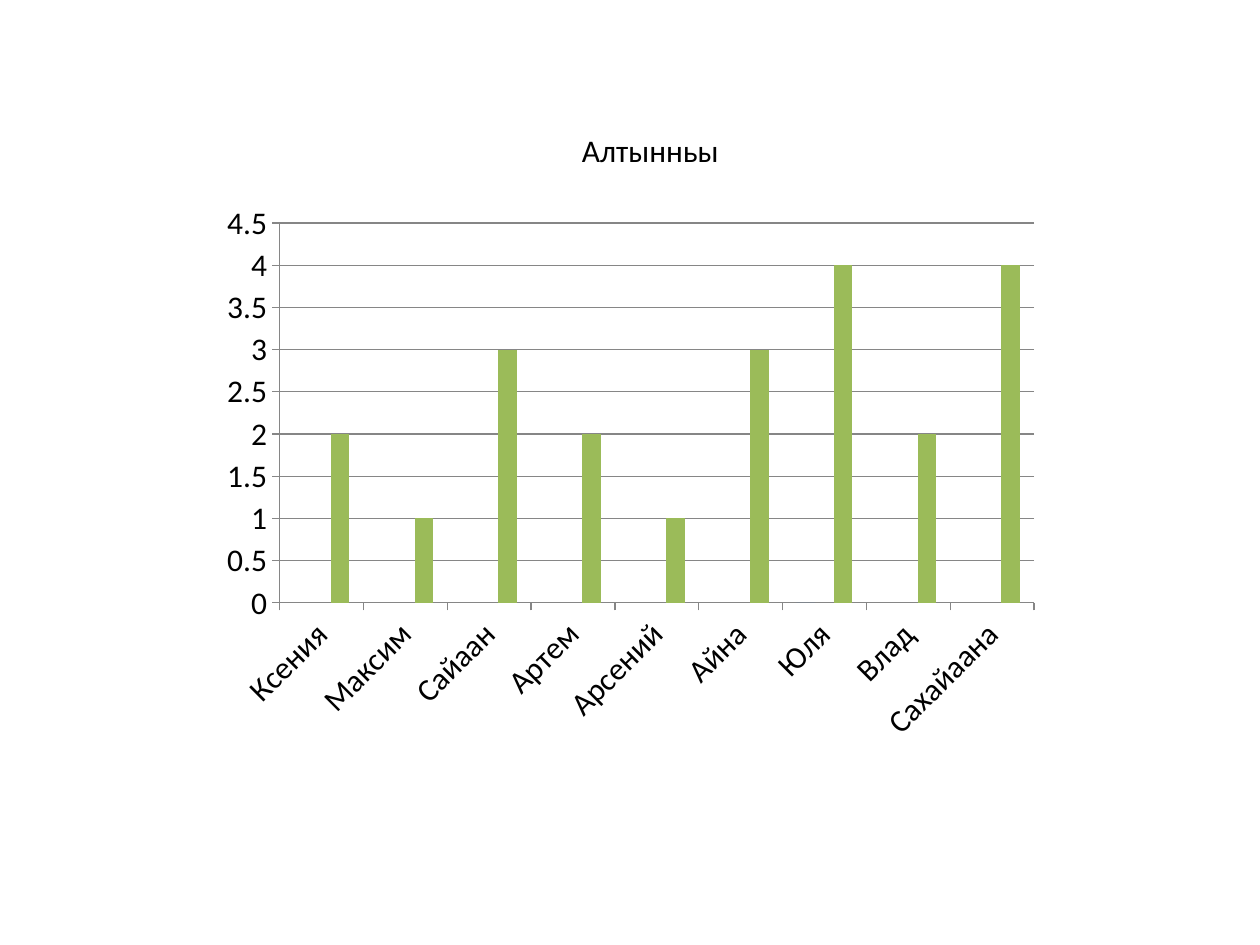
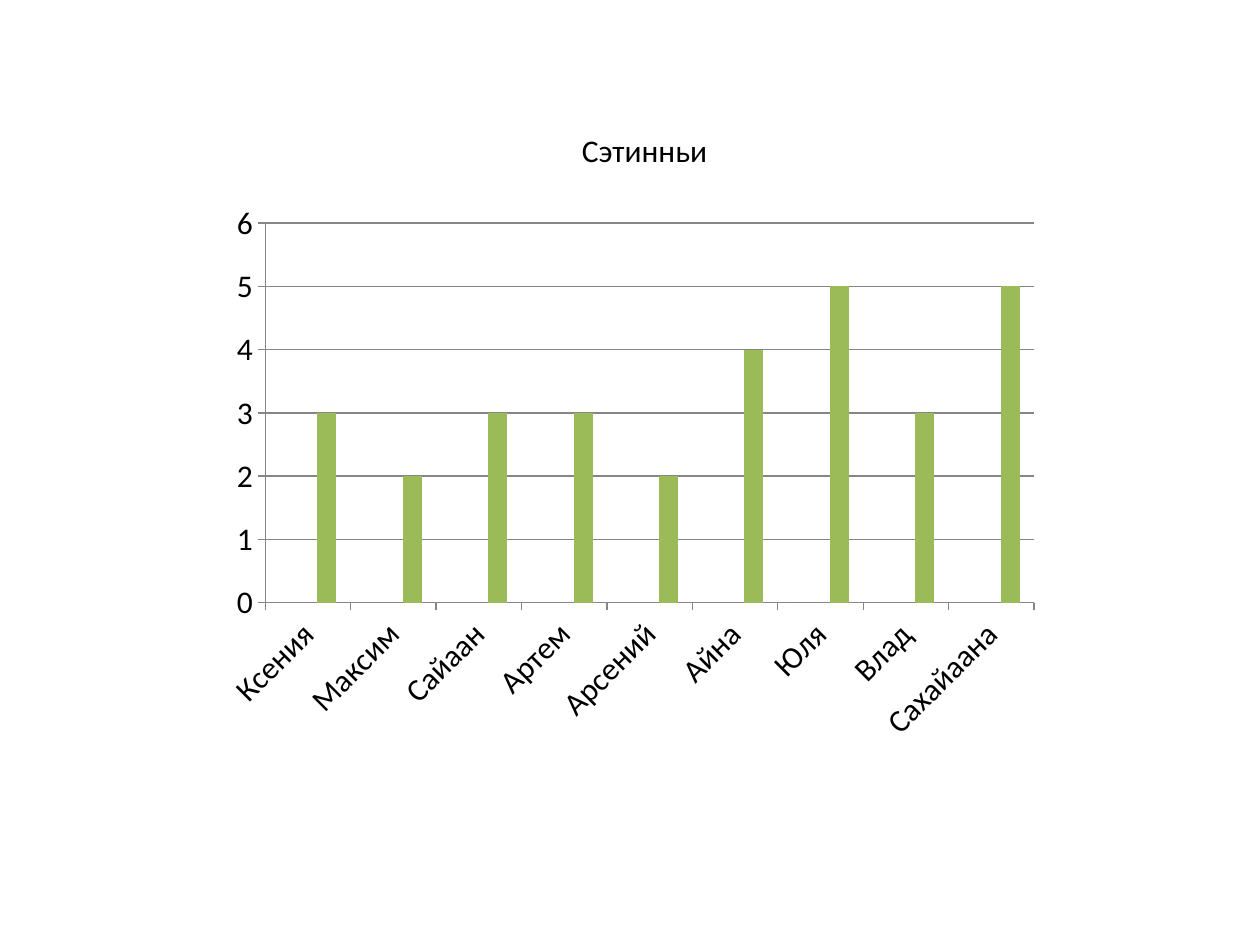
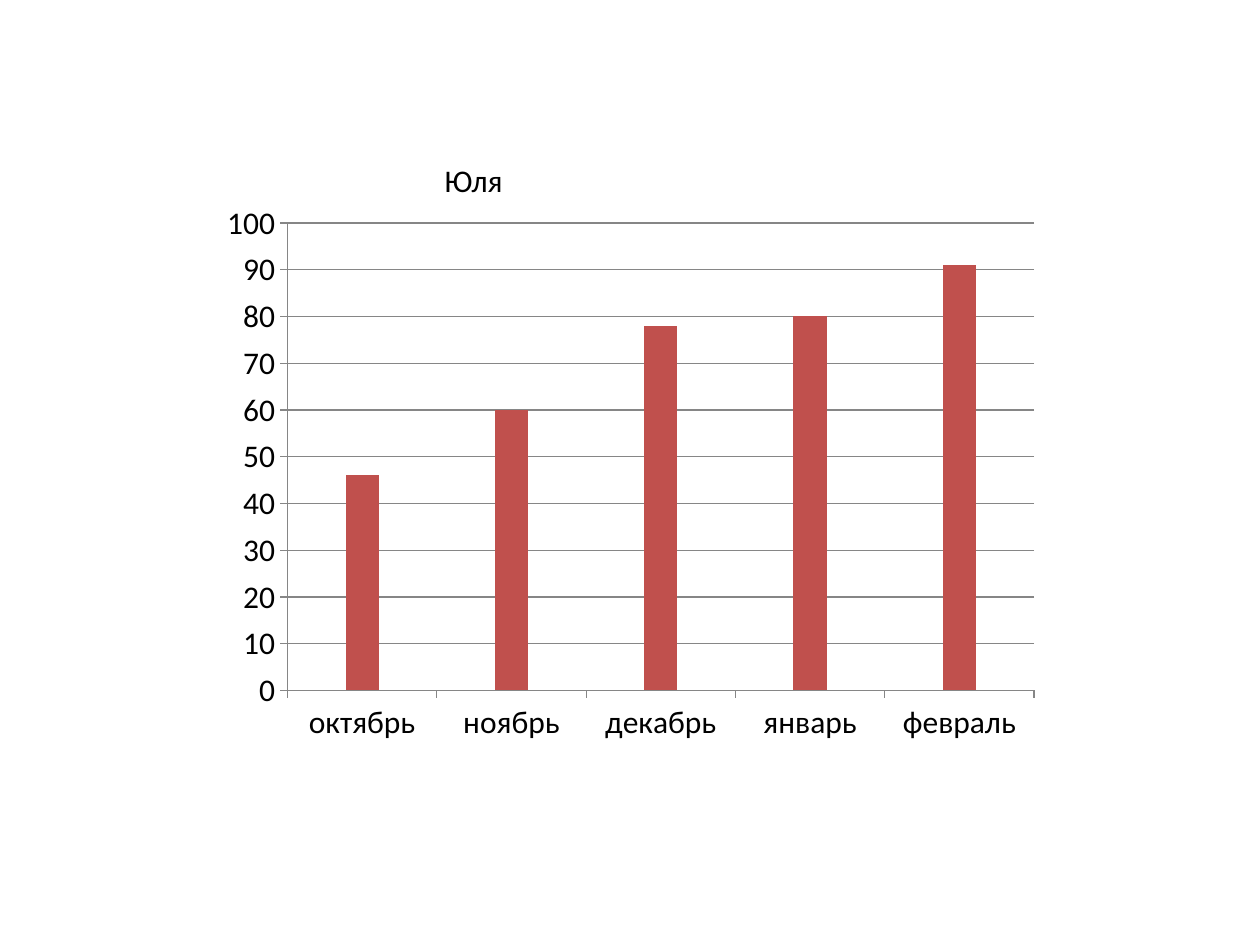
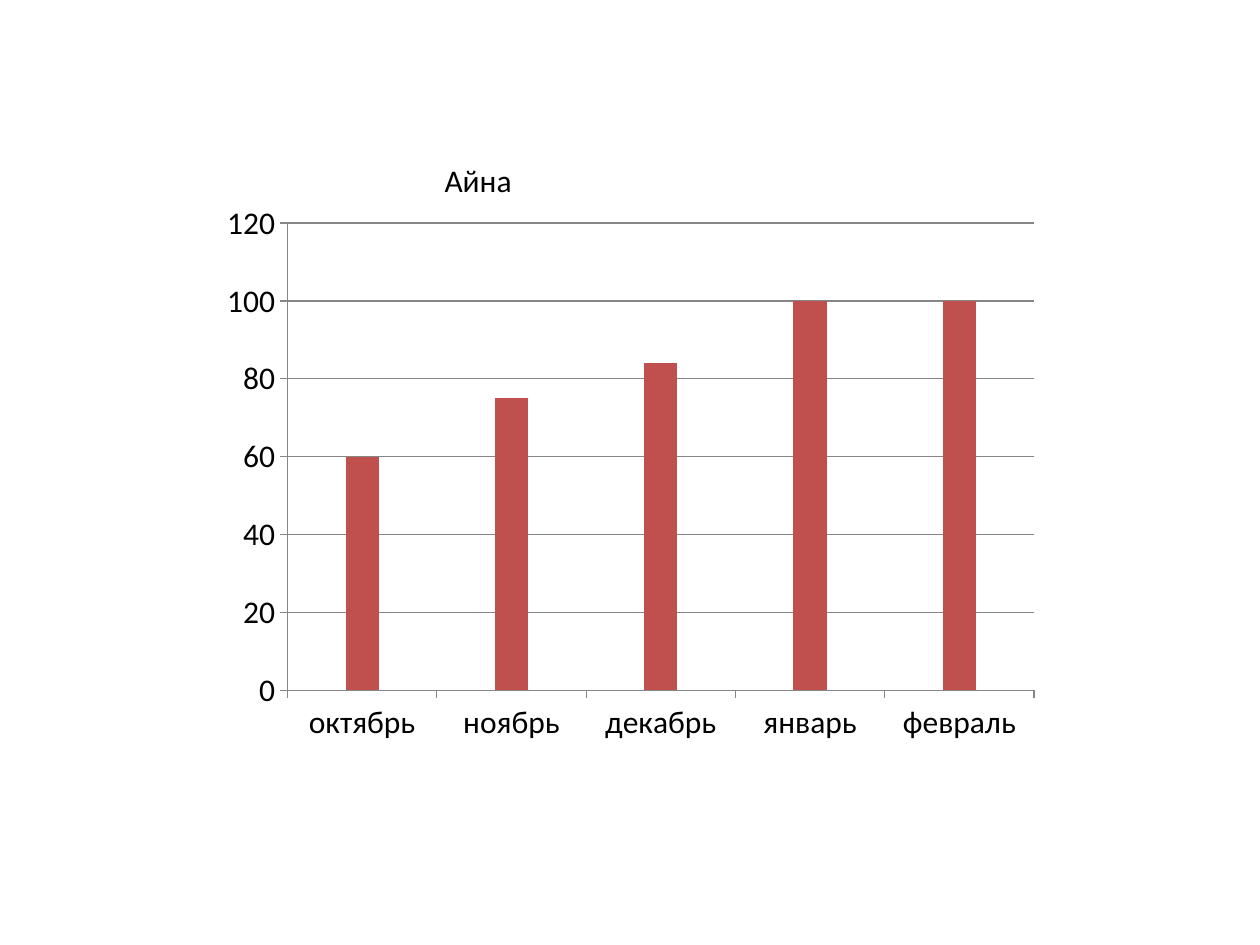
from pptx import Presentation
from pptx.chart.data import CategoryChartData
from pptx.dml.color import RGBColor
from pptx.enum.chart import XL_CHART_TYPE, XL_TICK_MARK
from pptx.enum.text import MSO_AUTO_SIZE
from pptx.util import Inches, Pt

COLUMN = XL_CHART_TYPE.COLUMN_CLUSTERED
OUT, NONE = XL_TICK_MARK.OUTSIDE, XL_TICK_MARK.NONE
GROW = MSO_AUTO_SIZE.SHAPE_TO_FIT_TEXT

KIDS = ["Ксения", "Максим", "Сайаан", "Артем", "Арсений",
        "Айна", "Юля", "Влад", "Сахайаана"]
MONTHS = ["октябрь", "ноябрь", "декабрь", "январь", "февраль"]

# Scores of each child in one month: title, width, values
BY_MONTH = [
    ("Алтынньы", 1.3, [2, 1, 3, 2, 1, 3, 4, 2, 4]),
    ("Сэтинньи", 1.22, [3, 2, 3, 3, 2, 4, 5, 3, 5]),
]
# Progress of one child over the months: title, width, values
BY_KID = [
    ("Юля", 0.67, [46, 60, 78, 80, 91]),
    ("Айна", 0.74, [60, 75, 84, 100, 100]),
]


def color(code):
    return RGBColor.from_string(code)


class Deck:
    FACE, SIZE = "Calibri", Pt(18)
    INK, GRID = "000000", "868686"
    FILLS = ["4F81BD", "C0504D", "9BBB59"]

    def __init__(self):
        self.prs = Presentation()
        self.prs.slide_width = Inches(10)
        self.prs.slide_height = Inches(7.5)
        self.slide = None

    def page(self):
        self.slide = self.prs.slides.add_slide(self.prs.slide_layouts[6])

    def style(self, font):
        font.name, font.size = self.FACE, self.SIZE
        font.color.rgb = color(self.INK)

    def line(self, line):
        line.color.rgb = color(self.GRID)
        line.width = Pt(0.75)

    def title(self, text, left, top, width):
        box = self.slide.shapes.add_textbox(
            Inches(left), Inches(top), Inches(width), Inches(0.4))
        frame = box.text_frame
        frame.word_wrap = False
        frame.auto_size = GROW
        frame.text = text
        self.style(frame.paragraphs[0].font)

    def chart(self, cats, rows):
        data = CategoryChartData()
        data.categories = cats
        for num, vals in enumerate(rows, 1):
            data.add_series(f"Series {num}", vals)
        chart = self.slide.shapes.add_chart(
            COLUMN, Inches(1.67), Inches(1.53), Inches(6.67), Inches(4.44),
            data).chart
        chart.has_title = chart.has_legend = False
        self.style(chart.font)

        # Columns
        plot = chart.plots[0]
        plot.gap_width, plot.overlap = 150, 0
        plot.vary_by_categories = False
        for row, fill in zip(plot.series, self.FILLS):
            row.format.fill.solid()
            row.format.fill.fore_color.rgb = color(fill)

        # Axes and grid
        for axis in (chart.category_axis, chart.value_axis):
            axis.major_tick_mark, axis.minor_tick_mark = OUT, NONE
            self.line(axis.format.line)
        chart.value_axis.has_major_gridlines = True
        self.line(chart.value_axis.major_gridlines.format.line)


def main():
    deck = Deck()

    # One slide per month, scores in the third series
    zero = [0 if kid == "Юля" else None for kid in KIDS]
    for name, width, vals in BY_MONTH:
        deck.page()
        deck.chart(KIDS, [zero, [None] * len(KIDS), vals])
        deck.title(name, 4.52, 0.99, width)

    # One slide per child, scores in the second series
    blank = [None] * len(MONTHS)
    for name, width, vals in BY_KID:
        deck.page()
        deck.chart(MONTHS, [blank, vals, blank])
        deck.title(name, 3.43, 1.23, width)

    deck.prs.save("out.pptx")


if __name__ == "__main__":
    main()
